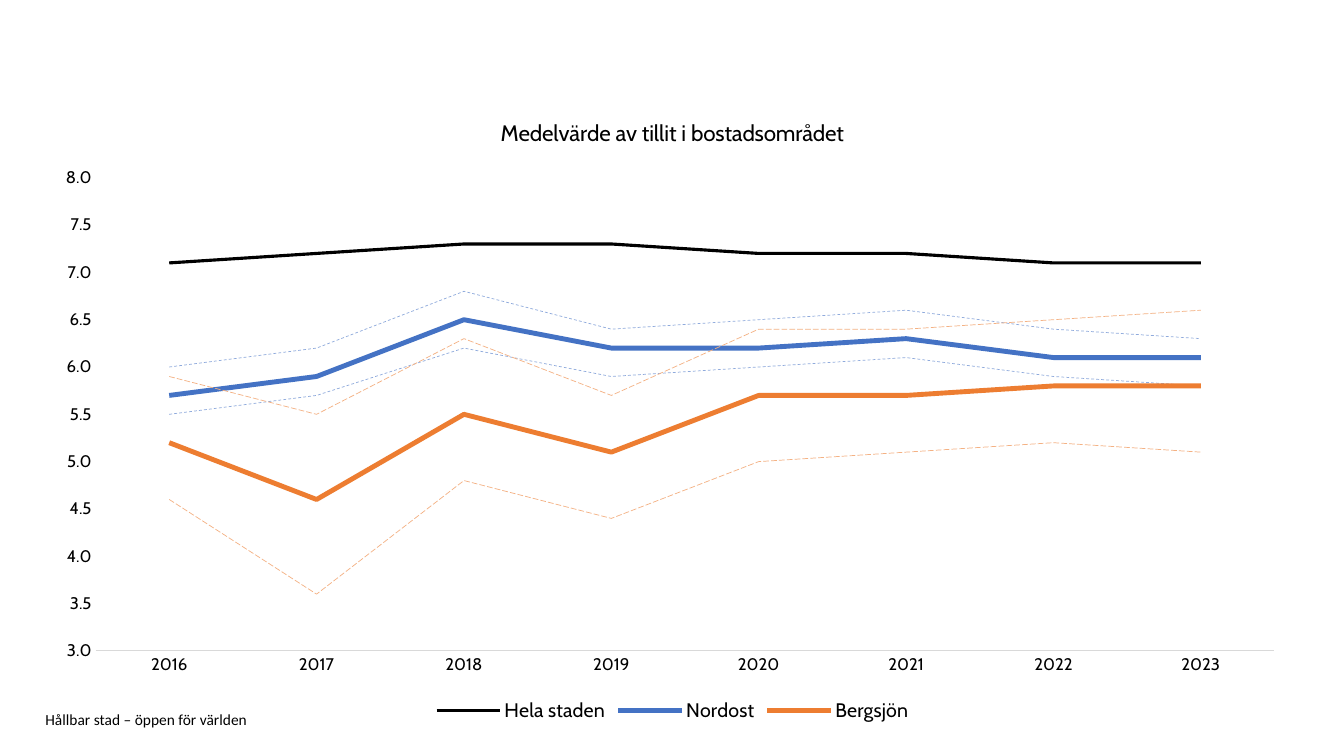
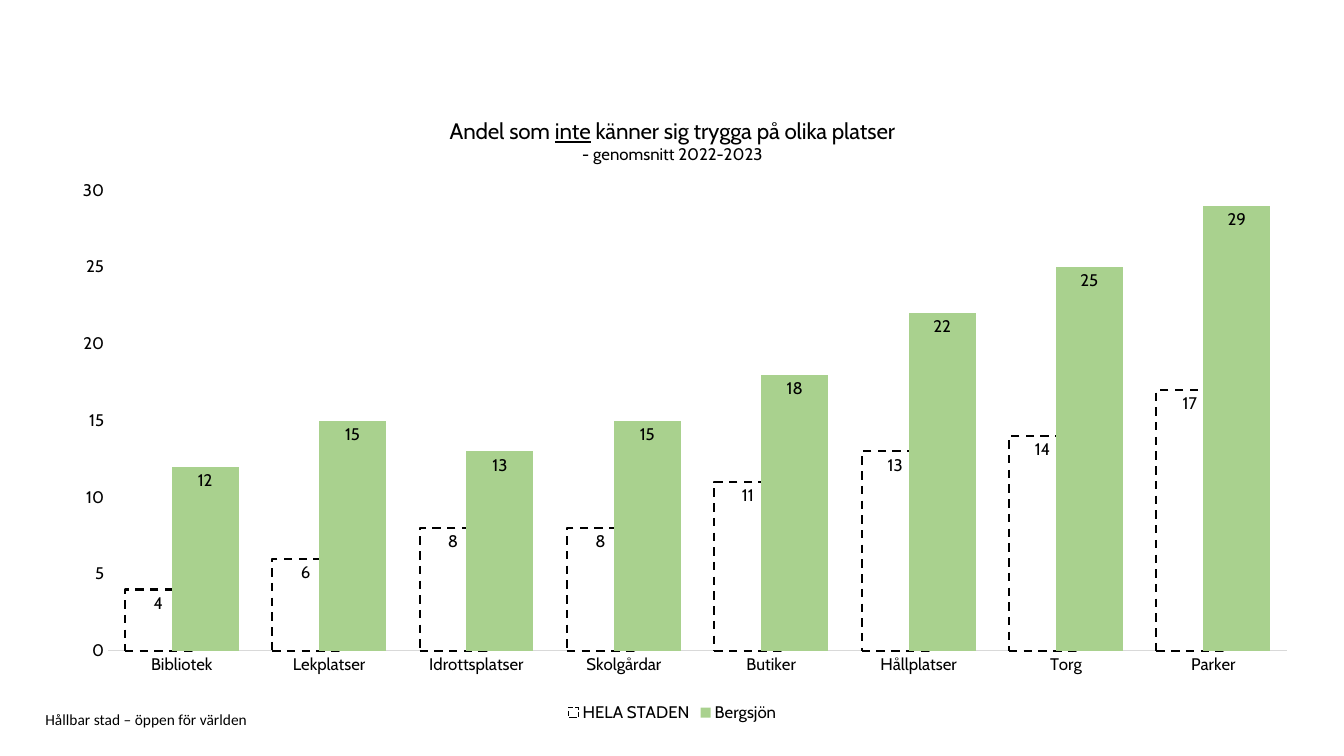
"""Builds two chart slides on trust and safety in a city district."""
from dataclasses import dataclass

from lxml import etree
from pptx import Presentation
from pptx.chart.data import CategoryChartData
from pptx.dml.color import RGBColor
from pptx.enum.chart import (XL_CHART_TYPE, XL_LABEL_POSITION,
                             XL_LEGEND_POSITION, XL_TICK_MARK)
from pptx.enum.dml import MSO_LINE
from pptx.enum.text import MSO_ANCHOR
from pptx.oxml.ns import qn
from pptx.util import Inches, Pt

LINE, COLUMN = XL_CHART_TYPE.LINE, XL_CHART_TYPE.COLUMN_CLUSTERED
DASH, LONG_DASH = MSO_LINE.DASH, MSO_LINE.LONG_DASH
NO_TICK = XL_TICK_MARK.NONE


@dataclass(frozen=True)
class Theme:
    black: str = "000000"
    white: str = "FFFFFF"
    axis: str = "D9D9D9"
    blue: str = "4472C4"
    pale_blue: str = "8FAADC"
    orange: str = "ED7D31"
    pale_orange: str = "F4B183"
    green: str = "A9D18E"
    chart_font: str = "Cabin"
    footer_font: str = "Calibri"
    title_size: float = 16
    legend_size: float = 14
    body_size: float = 12
    footer_size: float = 11


THEME = Theme()
SLIDE_SIZE = (13.33, 7.5)
CHART_AREA = (0.45, 0.95, 12.44, 6.26)
FOOTER_AREA = (0.45, 7.06, 9.45, 0.16)
FOOTER = "Hållbar stad – öppen för världen"

TRUST = {
    "type": LINE,
    "title": [(["Medelvärde av tillit i bostadsområdet"], THEME.title_size)],
    "categories": [str(year) for year in range(2016, 2024)],
    "series": [
        ("Hela staden", [7.1, 7.2, 7.3, 7.3, 7.2, 7.2, 7.1, 7.1],
         None, (THEME.black, 2.25, None)),
        ("Nordost", [5.7, 5.9, 6.5, 6.2, 6.2, 6.3, 6.1, 6.1],
         None, (THEME.blue, 3.5, None)),
        ("Series 3", [5.5, 5.7, 6.2, 5.9, 6.0, 6.1, 5.9, 5.8],
         None, (THEME.pale_blue, 0.5, DASH)),
        ("Series 4", [6.0, 6.2, 6.8, 6.4, 6.5, 6.6, 6.4, 6.3],
         None, (THEME.pale_blue, 0.5, DASH)),
        ("Bergsjön", [5.2, 4.6, 5.5, 5.1, 5.7, 5.7, 5.8, 5.8],
         None, (THEME.orange, 3.5, None)),
        ("Series 6", [4.6, 3.6, 4.8, 4.4, 5.0, 5.1, 5.2, 5.1],
         None, (THEME.pale_orange, 0.5, LONG_DASH)),
        ("Series 7", [5.9, 5.5, 6.3, 5.7, 6.4, 6.4, 6.5, 6.6],
         None, (THEME.pale_orange, 0.5, LONG_DASH)),
    ],
    "scale": (3, 8, 0.5, "0.0"),
    "plot": (0.04, 0.13, 0.94, 0.75),
    "legend_size": THEME.legend_size,
    "legend_hides": (2, 3, 5, 6),
}
SAFETY = {
    "type": COLUMN,
    "title": [(["Andel som ", "_inte", " känner sig trygga på olika platser"],
               THEME.title_size),
              (["- genomsnitt 2022-2023"], THEME.body_size)],
    "categories": ["Bibliotek", "Lekplatser", "Idrottsplatser", "Skolgårdar",
                   "Butiker", "Hållplatser", "Torg", "Parker"],
    "series": [
        ("HELA STADEN", [4, 6, 8, 8, 11, 13, 14, 17],
         THEME.white, (THEME.black, 1.5, DASH)),
        ("Bergsjön", [12, 15, 13, 15, 18, 22, 25, 29], THEME.green, None),
    ],
    "scale": (0, 30, 5, "0"),
    "plot": (0.05, 0.15, 0.94, 0.73),
    "legend_size": THEME.body_size,
    "legend_hides": (),
}


def rgb(value):
    return RGBColor.from_string(value)


def set_font(font, size, name=THEME.chart_font):
    font.size, font.name, font.bold = Pt(size), name, False
    font.color.rgb = rgb(THEME.black)


def element(parent, tag, **attributes):
    return etree.SubElement(parent, qn(tag), attributes)


def add_footer(page, layout):
    box = page.shapes.add_textbox(*map(Inches, FOOTER_AREA))
    frame = box.text_frame
    frame.word_wrap = True
    frame.vertical_anchor = MSO_ANCHOR.MIDDLE
    frame.margin_left = frame.margin_right = 0
    frame.margin_top = frame.margin_bottom = 0
    frame.text = FOOTER
    set_font(frame.paragraphs[0].runs[0].font, THEME.footer_size, THEME.footer_font)
    box.element.nvSpPr.cNvPr.set("id", "20")
    layout.element.cSld.spTree.append(box.element)


def write_title(chart, lines):
    frame = chart.chart_title.text_frame
    for index, (spans, size) in enumerate(lines):
        para = frame.add_paragraph() if index else frame.paragraphs[0]
        set_font(para.font, size)
        for text in spans:
            span = para.add_run()
            span.text = text.lstrip("_")
            set_font(span.font, size)
            if text.startswith("_"):
                span.font.underline = True


def style_axes(chart, scale):
    values, categories = chart.value_axis, chart.category_axis
    low, high, step, number_format = scale
    values.minimum_scale, values.maximum_scale = low, high
    values.major_unit = step
    values.has_major_gridlines = False
    values.tick_labels.number_format = number_format
    values.tick_labels.number_format_is_linked = False
    values.format.line.fill.background()
    categories.format.line.color.rgb = rgb(THEME.axis)
    categories.format.line.width = Pt(0.75)
    for axis in (values, categories):
        axis.major_tick_mark = axis.minor_tick_mark = NO_TICK
        set_font(axis.tick_labels.font, THEME.body_size)


def style_series(series, fill, outline):
    if fill:
        series.format.fill.solid()
        series.format.fill.fore_color.rgb = rgb(fill)
        labels = series.data_labels
        labels.show_value = True
        labels.position = XL_LABEL_POSITION.INSIDE_END
        labels.number_format, labels.number_format_is_linked = "0", False
        set_font(labels.font, THEME.body_size)
    else:
        series.smooth = False
    if outline:
        colour, width, dash = outline
        line = series.format.line
        line.color.rgb, line.width = rgb(colour), Pt(width)
        if dash:
            line.dash_style = dash


def style_legend(chart, size, hidden):
    chart.has_legend = True
    chart.legend.position = XL_LEGEND_POSITION.BOTTOM
    chart.legend.include_in_layout = False
    set_font(chart.legend.font, size)
    position = chart.element.find(".//" + qn("c:legendPos"))
    for index in reversed(hidden):
        entry = etree.Element(qn("c:legendEntry"))
        element(entry, "c:idx", val=str(index))
        element(entry, "c:delete", val="1")
        position.addnext(entry)


def place_plot(chart, shares):
    area = chart.element.find(".//" + qn("c:plotArea"))
    for old in area.findall(qn("c:layout")):
        area.remove(old)
    layout = etree.Element(qn("c:layout"))
    manual = element(layout, "c:manualLayout")
    element(manual, "c:layoutTarget", val="inner")
    for side in ("x", "y"):
        element(manual, f"c:{side}Mode", val="edge")
    for side, share in zip("xywh", shares):
        element(manual, f"c:{side}", val=str(share))
    area.insert(0, layout)


def add_chart(page, content):
    data = CategoryChartData()
    data.categories = content["categories"]
    for name, values, _, _ in content["series"]:
        data.add_series(name, values)
    chart = page.shapes.add_chart(
        content["type"], *map(Inches, CHART_AREA), data).chart
    set_font(chart.font, THEME.body_size)
    write_title(chart, content["title"])
    style_axes(chart, content["scale"])
    plot = chart.plots[0]
    plot.vary_by_categories = False
    if content["type"] == COLUMN:
        plot.gap_width, plot.overlap = 50, 30
    for series, (_, _, fill, outline) in zip(plot.series, content["series"]):
        style_series(series, fill, outline)
    style_legend(chart, content["legend_size"], content["legend_hides"])
    place_plot(chart, content["plot"])


def main():
    deck = Presentation()
    deck.slide_width, deck.slide_height = map(Inches, SLIDE_SIZE)
    layout = deck.slide_layouts[6]
    pages = [(deck.slides.add_slide(layout), content) for content in (TRUST, SAFETY)]
    add_footer(pages[0][0], layout)
    for page, content in pages:
        add_chart(page, content)
    deck.save("out.pptx")


if __name__ == "__main__":
    main()
